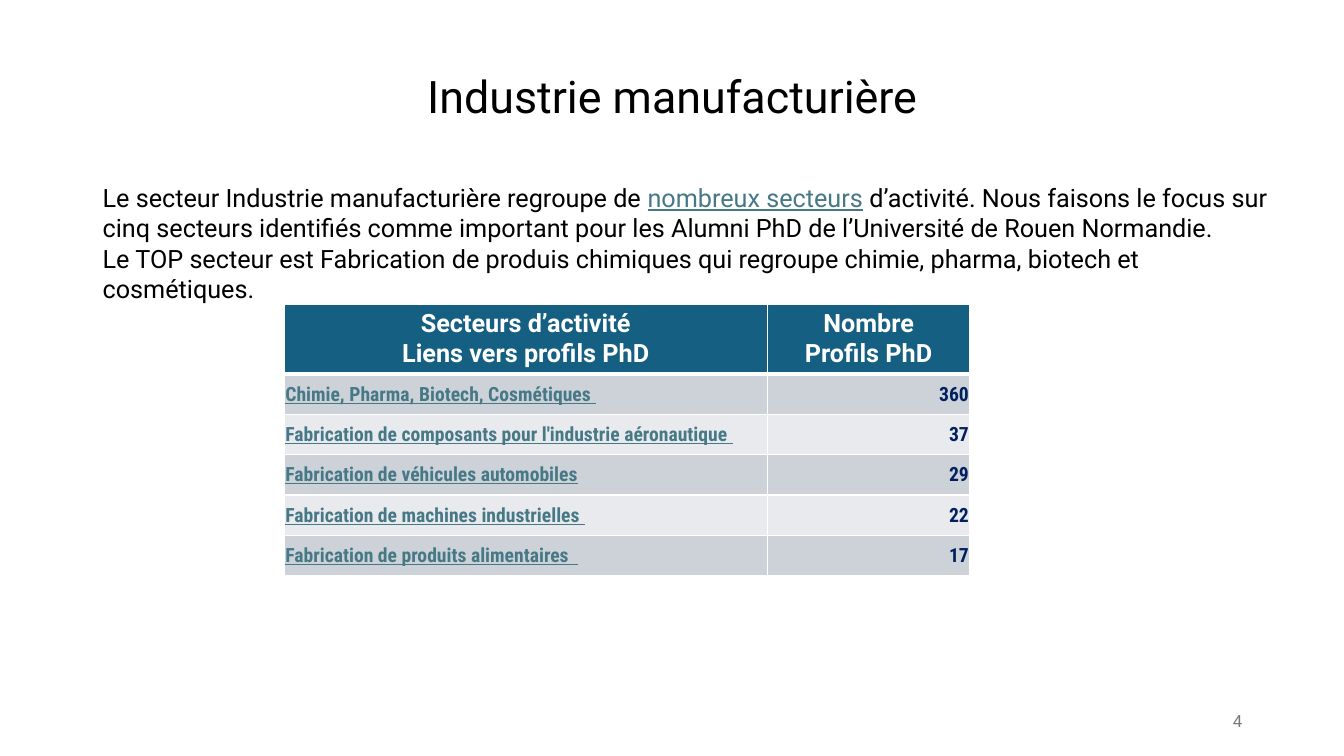
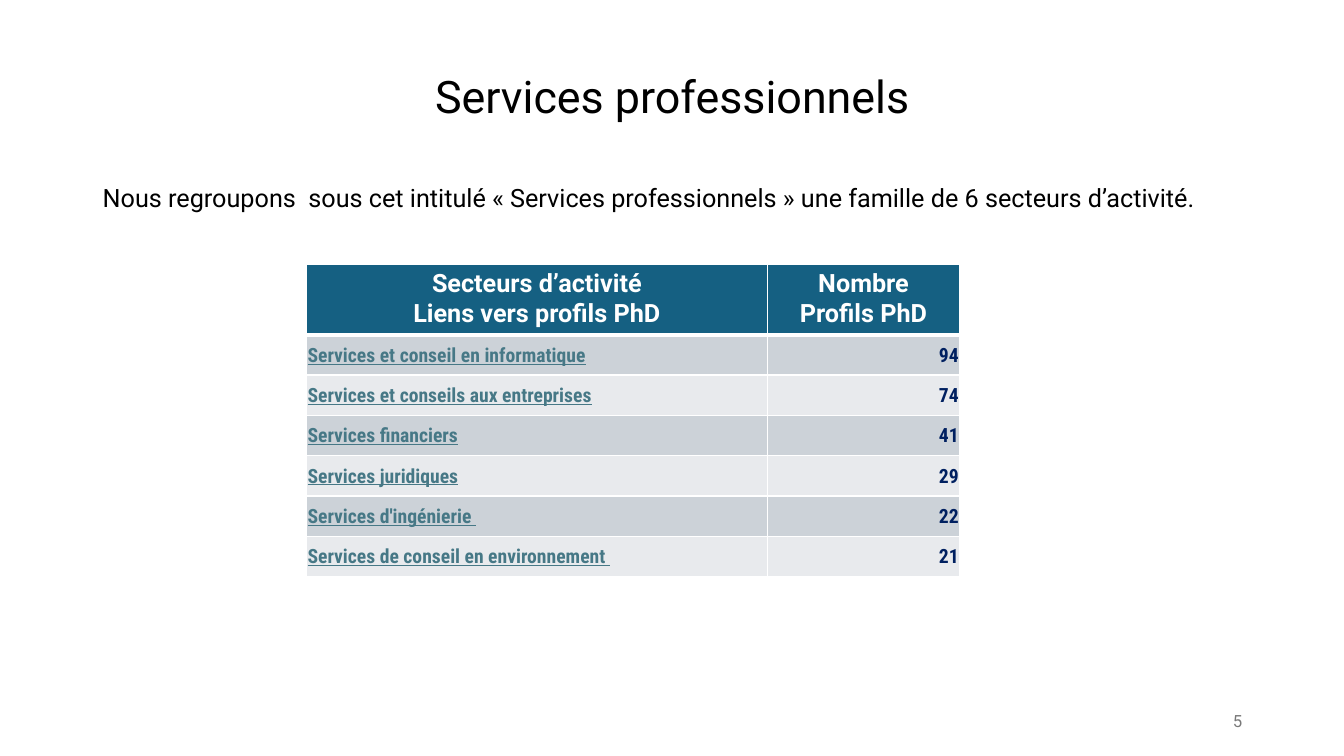
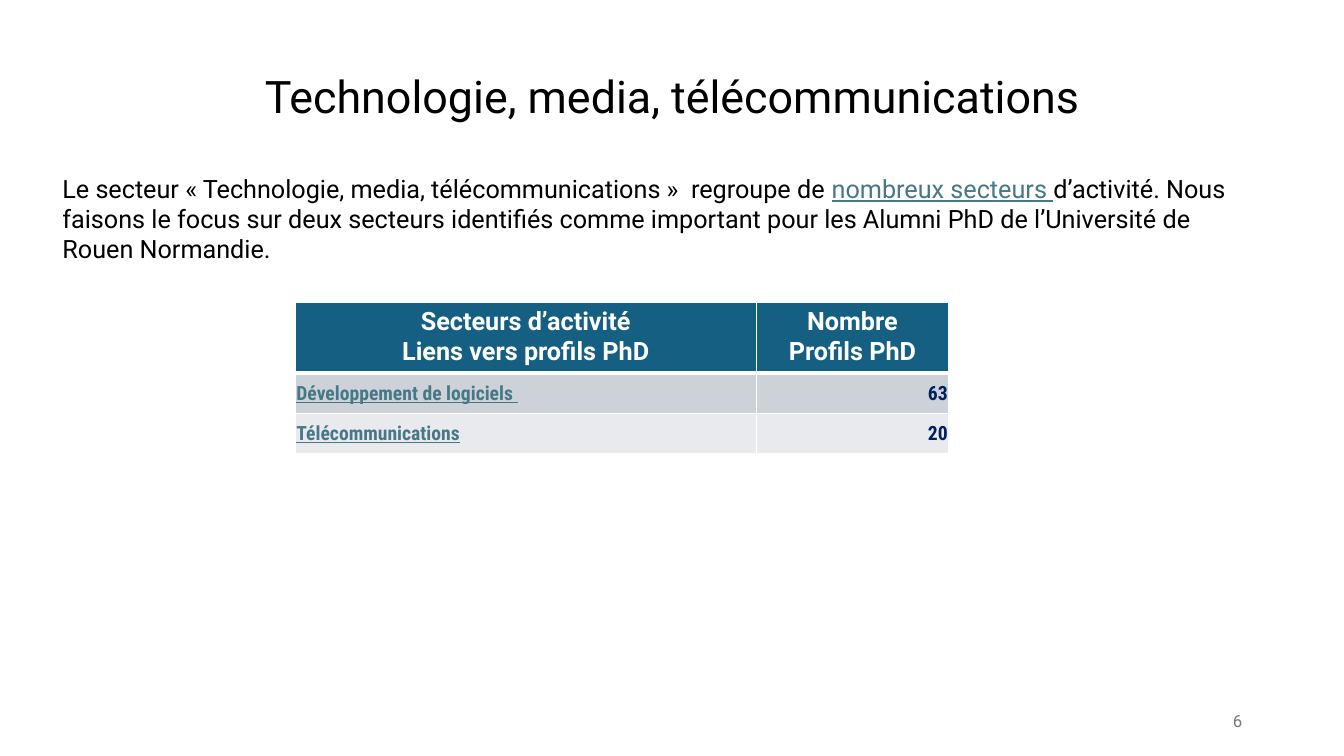
import pptx
import pptx.dml.color
import pptx.enum.text
import pptx.oxml
import pptx.oxml.ns
import pptx.util

Inches, Pt = pptx.util.Inches, pptx.util.Pt
ALIGN = pptx.enum.text.PP_ALIGN
ANCHOR = pptx.enum.text.MSO_ANCHOR
FIT = pptx.enum.text.MSO_AUTO_SIZE

COLORS = {"text": "000000", "link": "467886", "head": "156082", "white": "FFFFFF",
          "odd": "CCD2D8", "even": "E8EAED", "count": "002060", "page": "797979"}

# Text formats: font values plus a colour name
FORMATS = {
    "title": {"name": "Roboto", "size": Pt(32), "color": "text"},
    "body": {"name": "Roboto", "size": Pt(18), "color": "text"},
    "link": {"name": "Roboto", "size": Pt(18), "underline": True, "color": "link"},
    "head": {"name": "Roboto", "size": Pt(18), "bold": True, "color": "white"},
    "row": {"name": "Roboto Condensed", "size": Pt(14), "bold": True,
            "underline": True, "color": "link"},
    "count": {"name": "Roboto Condensed", "size": Pt(14), "bold": True, "color": "count"},
    "page": {"name": "Roboto", "size": Pt(12), "color": "page"},
}
HEADS = [["Secteurs d’activité", "Liens vers profils PhD"], ["Nombre", "Profils PhD"]]
INSETS = {"margin_left": 0.01, "margin_top": 0.01, "margin_right": 0.01, "margin_bottom": 0}


def rgb(name):
    return pptx.dml.color.RGBColor.from_string(COLORS[name])


class Deck:
    def __init__(self):
        self.prs = pptx.Presentation()
        self.prs.slide_width = Inches(13.33)
        self.prs.slide_height = Inches(7.5)
        self.slide = None

    def fill(self, frame, paras, align=ALIGN.LEFT, spacing=None):
        """Fill a frame; each paragraph is a list of (text, format) runs."""
        for i, runs in enumerate(paras):
            para = frame.add_paragraph() if i else frame.paragraphs[0]
            para.alignment = align
            if spacing:
                para.line_spacing = spacing
            for text, style in runs:
                run = para.add_run()
                run.text = text
                for key, value in FORMATS[style].items():
                    if key == "color":
                        run.font.color.rgb = rgb(value)
                    else:
                        setattr(run.font, key, value)

    def text(self, box, paras, anchor=ANCHOR.MIDDLE, fit=FIT.NONE, **kw):
        frame = self.slide.shapes.add_textbox(*map(Inches, box)).text_frame
        frame.word_wrap = True
        frame.auto_size = fit
        frame.vertical_anchor = anchor
        self.fill(frame, paras, **kw)

    def page(self, title, number):
        """Start a slide with its title and page number."""
        self.slide = self.prs.slides.add_slide(self.prs.slide_layouts[6])
        self.text((0.92, 0.61, 11.5, 0.74), [[(title, "title")]],
                  align=ALIGN.CENTER, spacing=0.9)
        self.text((9.42, 6.95, 3, 0.4), [[(str(number), "page")]], align=ALIGN.RIGHT)

    def intro(self, box, paras):
        self.text(box, paras, anchor=ANCHOR.TOP, fit=FIT.SHAPE_TO_FIT_TEXT)

    def cell(self, cell, color, top=1, bottom=1):
        """Borders come first in the cell's properties, then the fill."""
        props = cell._tc.get_or_add_tcPr()
        for side, width in zip("LRTB", (1, 1, top, bottom)):
            props.append(pptx.oxml.parse_xml(
                f'<a:ln{side} {pptx.oxml.ns.nsdecls("a")} w="{Pt(width)}"><a:solidFill>'
                f'<a:srgbClr val="{COLORS["white"]}"/></a:solidFill></a:ln{side}>'))
        cell.fill.solid()
        cell.fill.fore_color.rgb = rgb(color)

    def table(self, left, top, widths, rows):
        high = [0.69] + [0.4] * len(rows)
        box = (left, top, sum(widths), sum(high))
        grid = self.slide.shapes.add_table(len(high), 2, *map(Inches, box)).table
        grid.horz_banding = False
        for col, width in zip(grid.columns, widths):
            col.width = Inches(width)
        for row, height in zip(grid.rows, high):
            row.height = Inches(height)
        # Header
        for c, lines in enumerate(HEADS):
            cell = grid.cell(0, c)
            self.cell(cell, "head", bottom=3)
            self.fill(cell.text_frame, [[(line, "head")] for line in lines], ALIGN.CENTER)
        # Sectors and counts
        looks = [("row", ALIGN.LEFT), ("count", ALIGN.RIGHT)]
        for r, row in enumerate(rows, 1):
            for c, (value, (style, align)) in enumerate(zip(row, looks)):
                cell = grid.cell(r, c)
                self.cell(cell, "odd" if r % 2 else "even", top=3 if r == 1 else 1)
                cell.vertical_anchor = ANCHOR.MIDDLE
                for side, inset in INSETS.items():
                    setattr(cell, side, Inches(inset))
                self.fill(cell.text_frame, [[(str(value), style)]], align)


def main():
    deck = Deck()

    # Manufacturing
    deck.page("Industrie manufacturière", 4)
    deck.table(2.82, 3.02, (4.79, 2.01), [
        ("Chimie, Pharma, Biotech, Cosmétiques ", 360),
        ("Fabrication de composants pour l'industrie aéronautique ", 37),
        ("Fabrication de véhicules automobiles", 29),
        ("Fabrication de machines industrielles ", 22),
        ("Fabrication de produits alimentaires  ", 17)])
    deck.intro((0.92, 1.76, 11.89, 1.01), [
        [("Le secteur Industrie manufacturière regroupe de ", "body"),
         ("nombreux secteurs", "link"),
         (" d’activité. Nous faisons le focus sur cinq secteurs identifiés comme "
          "important pour les Alumni PhD de l’Université de Rouen Normandie.", "body")],
        [("Le TOP secteur est Fabrication de produis chimiques qui regroupe chimie, "
          "pharma, biotech et cosmétiques.", "body")]])

    # Professional services
    deck.page("Services professionnels", 5)
    deck.table(3.04, 2.62, (4.57, 1.91), [
        ("Services et conseil en informatique", 94),
        ("Services et conseils aux entreprises", 74),
        ("Services financiers", 41),
        ("Services juridiques", 29),
        ("Services d'ingénierie ", 22),
        ("Services de conseil en environnement ", 21)])
    deck.intro((0.92, 1.76, 11.89, 0.4), [
        [("Nous regroupons  sous cet intitulé « Services professionnels » une famille "
          "de 6 secteurs d’activité.", "body")]])

    # Technology, media, telecoms
    deck.page("Technologie, media, télécommunications", 6)
    deck.table(2.93, 3, (4.57, 1.91), [
        ("Développement de logiciels ", 63),
        ("Télécommunications", 20)])
    deck.intro((0.52, 1.67, 11.89, 1.01), [
        [("Le secteur « Technologie, media, télécommunications »  regroupe de ", "body"),
         ("nombreux secteurs ", "link"),
         ("d’activité. Nous faisons le focus sur deux secteurs identifiés comme "
          "important pour les Alumni PhD de l’Université de Rouen Normandie.", "body")]])

    deck.prs.save("out.pptx")


if __name__ == "__main__":
    main()
